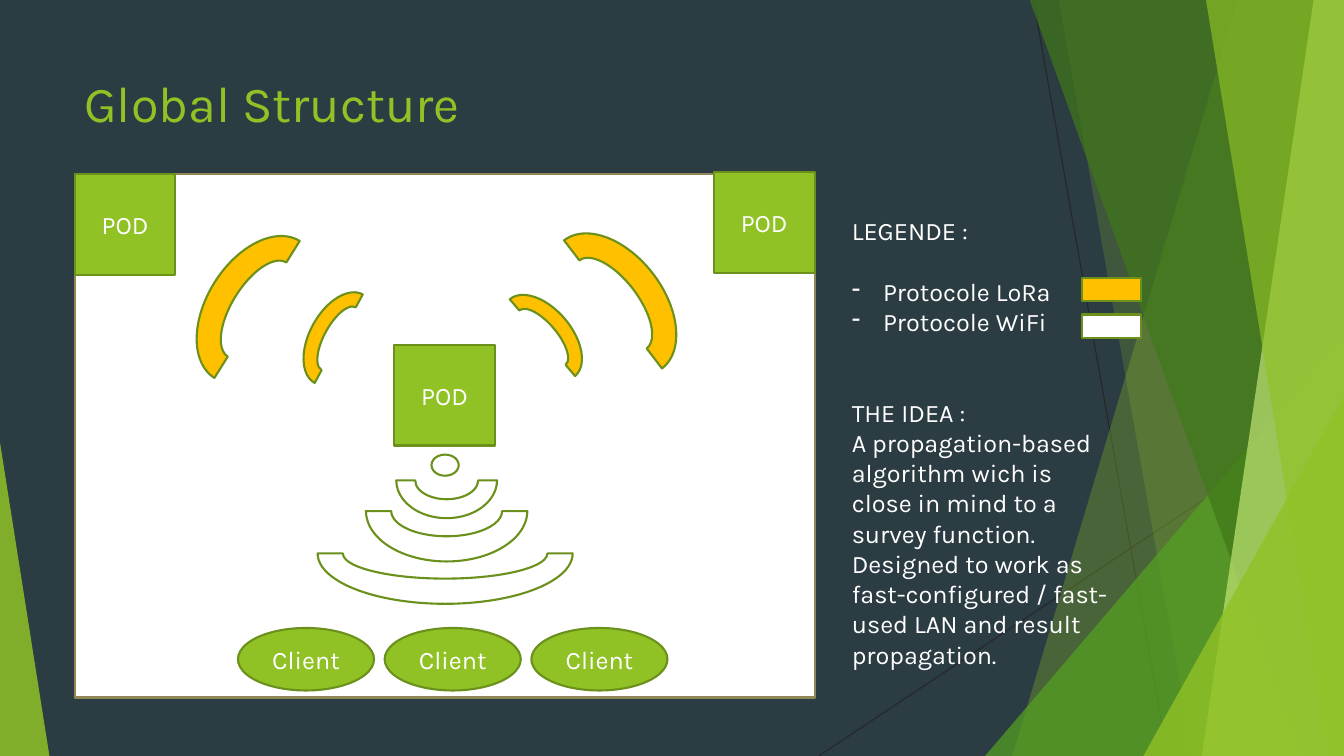
from lxml.etree import SubElement
from pptx import Presentation
from pptx.dml.color import RGBColor
from pptx.enum.shapes import MSO_CONNECTOR, MSO_SHAPE
from pptx.enum.text import MSO_ANCHOR, PP_ALIGN
from pptx.oxml.ns import qn
from pptx.util import Inches, Pt

GREEN, DARK_GREEN, ORANGE, WHITE = "90C226", "6B901C", "FFC000", "FFFFFF"
SLIDE_WIDTH, SLIDE_HEIGHT = 13.33, 7.5
BODY_FONT = {"name": "Karla", "size": Pt(18)}
TITLE_FONT = {"name": "Karla", "size": Pt(36)}
LABEL_FRAME = {"word_wrap": True, "vertical_anchor": MSO_ANCHOR.MIDDLE}
TEXT_FRAME = {"word_wrap": True, "vertical_anchor": MSO_ANCHOR.TOP}


def rgb(color):
    return RGBColor.from_string(color)


def apply_format(target, values):
    for name, value in values.items():
        setattr(target, name, value)


def paint(shape, fill, border=None, opacity=100):
    shape.shadow.inherit = False
    shape.fill.solid()
    shape.fill.fore_color.rgb = rgb(fill)
    if opacity < 100:
        color = shape.fill._xPr.find(qn("a:solidFill"))[0]
        SubElement(color, qn("a:alpha"), val=str(opacity * 1000))
    if border:
        shape.line.color.rgb = rgb(border)
        shape.line.width = Pt(1.5)
    else:
        shape.line.fill.background()


def write(paragraph, text, font, color):
    run = paragraph.add_run()
    run.text = text
    apply_format(run.font, font)
    run.font.color.rgb = rgb(color)


def add_figure(slide, kind, box, fill, border=DARK_GREEN, label=None, rotation=0):
    figure = slide.shapes.add_shape(kind, *map(Inches, box))
    paint(figure, fill, border)
    figure.rotation = rotation
    if label:
        apply_format(figure.text_frame, LABEL_FRAME)
        paragraph = figure.text_frame.paragraphs[0]
        paragraph.alignment = PP_ALIGN.CENTER
        write(paragraph, label, BODY_FONT, WHITE)


def add_ray(slide, start, end):
    ray = slide.shapes.add_connector(MSO_CONNECTOR.STRAIGHT, *map(Inches, start + end))
    ray.line.color.rgb = rgb("262626")
    ray.line.width = Pt(0.75)
    SubElement(ray._element.spPr, qn("a:effectLst"))


def add_band(slide, top_x, bottom_x, color, opacity):
    corners = [(SLIDE_WIDTH, -0.01), (SLIDE_WIDTH, SLIDE_HEIGHT), (bottom_x, SLIDE_HEIGHT)]
    outline = slide.shapes.build_freeform(Inches(top_x), Inches(-0.01))
    outline.add_line_segments([(Inches(x), Inches(y)) for x, y in corners])
    paint(outline.convert_to_shape(), color, opacity=opacity)


def add_wedge(slide, left, top, width, apex, color, opacity):
    wedge = slide.shapes.add_shape(
        MSO_SHAPE.ISOSCELES_TRIANGLE,
        *map(Inches, (left, top, width, SLIDE_HEIGHT - top)))
    wedge.adjustments[0] = apex
    paint(wedge, color, opacity=opacity)


def add_text(slide, box, lines, font, color):
    frame = slide.shapes.add_textbox(*map(Inches, box)).text_frame
    apply_format(frame, TEXT_FRAME)
    for index, (text, gap, dashed) in enumerate(lines):
        paragraph = frame.add_paragraph() if index else frame.paragraphs[0]
        paragraph.space_before = Pt(gap)
        if dashed:
            properties = paragraph._p.get_or_add_pPr()
            properties.set("marL", str(Inches(0.31)))
            properties.set("indent", str(Inches(-0.31)))
            SubElement(properties, qn("a:buChar"), char="-")
        write(paragraph, text, font, color)


def add_backdrop(slide):
    add_ray(slide, (10.25, 0), (11.58, SLIDE_HEIGHT))
    add_ray(slide, (SLIDE_WIDTH, 4.03), (8.12, SLIDE_HEIGHT))
    add_band(slide, 12.28, 10.04, GREEN, 30)
    add_band(slide, 10.5, 11.83, GREEN, 20)
    add_wedge(slide, 9.77, 3.33, 3.56, 1, "54A021", 72)
    add_band(slide, 10.21, 12.91, "3F7819", 70)
    add_band(slide, 13.03, 11.92, "C0E474", 70)
    add_band(slide, 11.96, 13.18, GREEN, 65)
    add_wedge(slide, 11.34, 3.93, 1.99, 1, GREEN, 80)
    add_wedge(slide, 0, 4.39, 0.49, 0, GREEN, 85)


def add_network(slide):
    add_figure(slide, MSO_SHAPE.RECTANGLE, (0.74, 1.73, 7.34, 5.19), WHITE, "918655")
    for left, top in [(3.91, 3.42), (0.74, 1.73), (7.08, 1.71)]:
        add_figure(slide, MSO_SHAPE.RECTANGLE, (left, top, 1, 1), GREEN, label="POD")
    for column in range(3):
        client = (2.36 + 1.455 * column, 6.23, 1.35, 0.62)
        add_figure(slide, MSO_SHAPE.OVAL, client, GREEN, label="Client")
    waves = [
        ((3.93, 4.39, 1, 0.75), 180, WHITE),
        ((3.63, 4.57, 1.6, 1), 180, WHITE),
        ((3.15, 4.99, 2.53, 1), 180, WHITE),
        ((2.86, 3.07, 1, 0.58), 298.5, ORANGE),
        ((1.75, 2.57, 1.6, 1), 301.9, ORANGE),
        ((4.88, 3.06, 1, 0.58), 49.6, ORANGE),
        ((5.28, 2.52, 1.6, 1), 52.6, ORANGE),
    ]
    for box, rotation, color in waves:
        add_figure(slide, MSO_SHAPE.BLOCK_ARC, box, color, rotation=rotation)
    add_figure(slide, MSO_SHAPE.OVAL, (4.28, 4.51, 0.27, 0.21), WHITE)


def add_legend(slide):
    lines = [
        ("LEGENDE :", 0, False),
        ("Protocole LoRa", 21.6, True),
        ("Protocole WiFi", 0, True),
        ("THE IDEA :", 43.2, False),
        ("A propagation-based algorithm wich is close in mind to a survey function.", 0, False),
        ("Designed to work as fast-configured / fast-used LAN and result propagation.", 0, False),
    ]
    add_text(slide, (8.35, 2.09, 2.8, 4.64), lines, BODY_FONT, WHITE)
    for top, color in [(2.76, ORANGE), (3.12, WHITE)]:
        add_figure(slide, MSO_SHAPE.RECTANGLE, (10.73, top, 0.59, 0.23), color)


def main():
    deck = Presentation()
    deck.slide_width = Inches(SLIDE_WIDTH)
    deck.slide_height = Inches(SLIDE_HEIGHT)
    slide = deck.slides.add_slide(deck.slide_layouts[6])
    slide.background.fill.solid()
    slide.background.fill.fore_color.rgb = rgb("2C3C43")
    add_backdrop(slide)
    title = [("Global Structure", 0, False)]
    add_text(slide, (0.74, 0.67, 8.26, 1.44), title, TITLE_FONT, GREEN)
    add_network(slide)
    add_legend(slide)
    deck.save("out.pptx")


if __name__ == "__main__":
    main()
